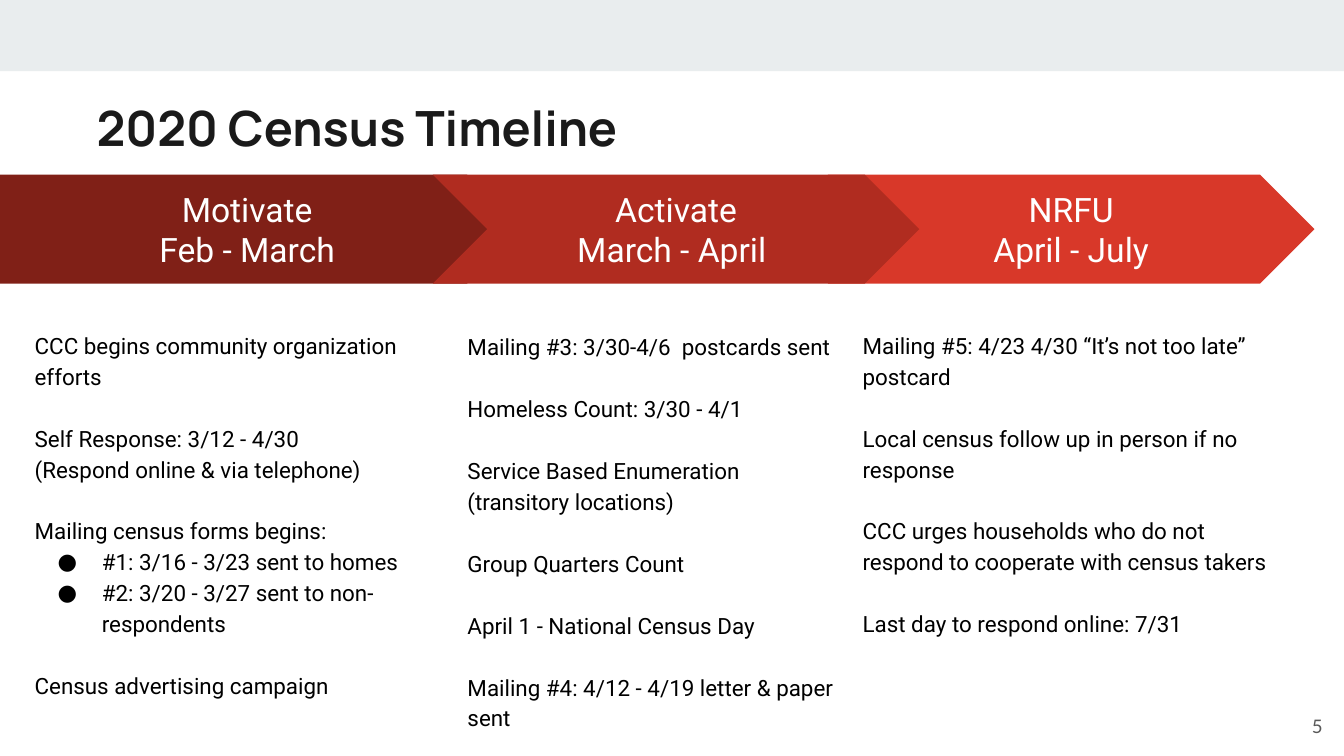
from lxml import etree
from pptx import Presentation
from pptx.dml import color
from pptx.enum import shapes, text
from pptx.oxml import ns
from pptx.util import Inches, Pt


def rgb(value):
    return color.RGBColor.from_string(value)


def add_paragraph(frame, content, size, font, ink, bold=False, bullet=False):
    first = not frame.paragraphs[0].runs
    paragraph = frame.paragraphs[0] if first else frame.add_paragraph()
    if bullet:
        properties = paragraph._p.get_or_add_pPr()
        properties.set("marL", str(Inches(0.5)))
        properties.set("indent", str(Inches(-0.33)))
        bullet_color = etree.SubElement(properties, ns.qn("a:buClr"))
        etree.SubElement(bullet_color, ns.qn("a:srgbClr")).set("val", ink)
        etree.SubElement(properties, ns.qn("a:buFont")).set("typeface", font)
        etree.SubElement(properties, ns.qn("a:buChar")).set("char", "●")
    run = paragraph.add_run()
    run.text = content
    run.font.size = Pt(size)
    run.font.name = font
    run.font.bold = bold
    run.font.color.rgb = rgb(ink)
    return paragraph


presentation = Presentation()
presentation.slide_width = Inches(10)
presentation.slide_height = Inches(10 * 9 / 16)
slide = presentation.slides.add_slide(presentation.slide_layouts[6])

PENTAGON = shapes.MSO_SHAPE.PENTAGON
CHEVRON = shapes.MSO_SHAPE.CHEVRON
banner = (shapes.MSO_SHAPE.RECTANGLE, 0, 0, 10, 0.53, "E9EDEE", [])
arrows = [
    (CHEVRON, 6.16, 1.3, 3.62, 0.81, "D83829", ["NRFU", "April - July"]),
    (PENTAGON, 0, 1.3, 3.88, 0.81, "802017", ["Motivate", "Feb - March"]),
    (CHEVRON, 3.22, 1.3, 3.62, 0.81, "B02C20", ["Activate", "March - April "]),
]
for kind, left, top, width, height, fill, labels in [banner] + arrows:
    shape = slide.shapes.add_shape(kind, Inches(left), Inches(top), Inches(width), Inches(height))
    shape.shadow.inherit = False
    shape.fill.solid()
    shape.fill.fore_color.rgb = rgb(fill)
    shape.line.fill.background()
    frame = shape.text_frame
    frame.vertical_anchor = text.MSO_ANCHOR.MIDDLE
    frame.margin_left = frame.margin_right = Inches(0.1)
    frame.margin_top = frame.margin_bottom = Inches(0.1)
    for label in labels:
        paragraph = add_paragraph(frame, label, 18, "Roboto", "FFFFFF")
        paragraph.alignment = text.PP_ALIGN.CENTER

columns = [
    (6.32, 2.34, 3.28, [
        ["Mailing #5: 4/23 4/30 “It’s not too late” postcard"],
        ["Local census follow up in person if no response"],
        ["CCC urges households who do not respond to cooperate with census takers"],
        ["Last day to respond online: 7/31"],
    ]),
    (0.16, 2.34, 3.34, [
        ["CCC begins community organization efforts"],
        ["Self Response: 3/12 - 4/30", "(Respond online & via telephone)"],
        ["Mailing census forms begins:", "#1: 3/16 - 3/23 sent to homes",
         "#2: 3/20 - 3/27 sent to non-respondents"],
        ["Census advertising campaign"],
    ]),
    (3.38, 2.35, 3.02, [
        ["Mailing #3: 3/30-4/6  postcards sent"],
        ["Homeless Count: 3/30 - 4/1"],
        ["Service Based Enumeration (transitory locations)"],
        ["Group Quarters Count"],
        ["April 1 - National Census Day"],
        ["Mailing #4: 4/12 - 4/19 letter & paper sent"],
    ]),
]
for left, top, width, blocks in columns:
    box = slide.shapes.add_textbox(Inches(left), Inches(top), Inches(width), Inches(3.14))
    frame = box.text_frame
    frame.word_wrap = True
    frame.margin_top = frame.margin_bottom = Inches(0.1)
    for block_index, block in enumerate(blocks):
        for line_index, line in enumerate(block):
            bullet = line.startswith("#")
            paragraph = add_paragraph(frame, line, 12, "Roboto", "000000", bullet=bullet)
            paragraph.line_spacing = 1.15
            if block_index and line_index == 0:
                paragraph.space_before = Pt(16.6)

title = slide.shapes.add_textbox(Inches(0.62), Inches(0.63), Inches(8.98), Inches(0.59))
title.text_frame.word_wrap = True
title.text_frame.margin_top = title.text_frame.margin_bottom = Inches(0.1)
add_paragraph(title.text_frame, "2020 Census Timeline", 26, "Manrope", "1A1A1A", bold=True)

number = slide.shapes.add_textbox(Inches(9.34), Inches(5.19), Inches(0.6), Inches(0.43))
number.text_frame.word_wrap = True
number.text_frame.vertical_anchor = text.MSO_ANCHOR.MIDDLE
paragraph = add_paragraph(number.text_frame, "5", 10, "Lato", "595959")
paragraph.alignment = text.PP_ALIGN.RIGHT

presentation.save("out.pptx")
